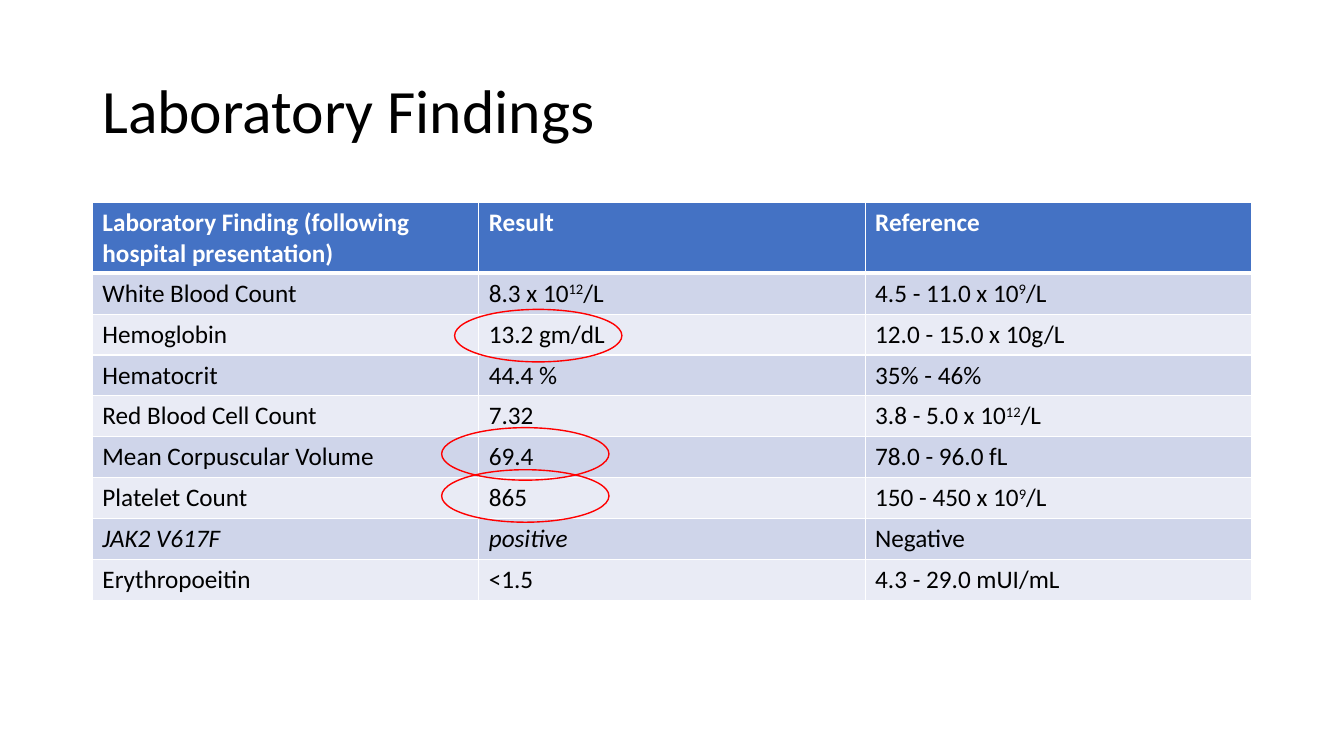
"""Build a slide with a table of laboratory findings and circled results."""
from dataclasses import dataclass
from typing import Any

from lxml import etree
from pptx import Presentation
from pptx import util as u
from pptx.dml.color import RGBColor
from pptx.enum import shapes, text
from pptx.oxml.ns import qn

COLOURS = {
    "text": "000000",
    "header": "4472C4",
    "odd_row": "CFD5EA",
    "even_row": "E9EBF5",
    "white": "FFFFFF",
    "circle": "FF0000",
}
FONT = "Calibri"
LEFT, WIDTH = 66, 828
TABLE_TOP = 144.75
HEADER_HEIGHT, ROW_HEIGHT = 50.4, 29.2
CIRCLE_WIDTH, CIRCLE_HEIGHT = 119.5, 37.5


@dataclass(frozen=True)
class Finding:
    name: str
    result: str
    reference: str
    italic: bool = False


@dataclass(frozen=True)
class Circle:
    left: float
    top: float


HEADER = Finding("Laboratory Finding (following hospital presentation)", "Result", "Reference")
FINDINGS = [
    Finding("White Blood Count", "8.3 x 10^12^/L", "4.5 - 11.0 x 10^9^/L"),
    Finding("Hemoglobin", "13.2 gm/dL", "12.0 - 15.0 x 10g/L"),
    Finding("Hematocrit", "44.4 %", "35% - 46%"),
    Finding("Red Blood Cell Count", "7.32", "3.8 - 5.0 x 10^12^/L"),
    Finding("Mean Corpuscular Volume", "69.4", "78.0 - 96.0 fL"),
    Finding("Platelet Count", "865", "150 - 450 x 10^9^/L"),
    Finding("JAK2 V617F", "positive", "Negative", italic=True),
    Finding("Erythropoeitin", "<1.5", "4.3 - 29.0 mUI/mL"),
]
CIRCLES = [Circle(324.75, 221), Circle(315.5, 335.5), Circle(315.5, 305.5)]


def colour(name: str) -> RGBColor:
    return RGBColor.from_string(COLOURS[name])


def write(para: Any, content: str, ink: str, **formats: Any) -> None:
    for index, part in enumerate(content.split("^")):
        span = para.add_run()
        span.text = part
        for key, value in {"name": FONT, **formats}.items():
            setattr(span.font, key, value)
        span.font.color.rgb = colour(ink)
        if index % 2:
            span._r.get_or_add_rPr().set("baseline", "30000")


def add_border(cell: Any, side: str, points: float) -> None:
    properties = cell._tc.get_or_add_tcPr()
    line = etree.SubElement(properties, qn(f"a:ln{side}"), w=str(u.Pt(points)))
    fill = etree.SubElement(line, qn("a:solidFill"))
    etree.SubElement(fill, qn("a:srgbClr"), val=COLOURS["white"])


def add_title(page: Any) -> None:
    box = page.shapes.add_textbox(u.Pt(LEFT), u.Pt(28.75), u.Pt(WIDTH), u.Pt(104.4))
    frame = box.text_frame
    for key, value in {"word_wrap": True, "vertical_anchor": text.MSO_ANCHOR.MIDDLE}.items():
        setattr(frame, key, value)
    para = frame.paragraphs[0]
    para.line_spacing = 0.9
    write(para, "Laboratory Findings", "text", size=u.Pt(44))


def add_findings(page: Any) -> None:
    rows = [HEADER, *FINDINGS]
    height = HEADER_HEIGHT + ROW_HEIGHT * len(FINDINGS)
    table = page.shapes.add_table(
        len(rows), 3, u.Pt(LEFT), u.Pt(TABLE_TOP), u.Pt(WIDTH), u.Pt(height)
    ).table
    for number, finding in enumerate(rows):
        is_header = number == 0
        table.rows[number].height = u.Pt(HEADER_HEIGHT if is_header else ROW_HEIGHT)
        band = "header" if is_header else "odd_row" if number % 2 else "even_row"
        borders = {"L": 1, "R": 1, "T": 3 if number == 1 else 1, "B": 3 if is_header else 1}
        contents = (finding.name, finding.result, finding.reference)
        for column, content in enumerate(contents):
            cell = table.cell(number, column)
            for side, points in borders.items():
                add_border(cell, side, points)
            cell.fill.solid()
            cell.fill.fore_color.rgb = colour(band)
            write(
                cell.text_frame.paragraphs[0],
                content,
                "white" if is_header else "text",
                size=u.Pt(18),
                bold=is_header,
                italic=finding.italic and column < 2,
            )


def add_circle(page: Any, circle: Circle) -> None:
    oval = page.shapes.add_shape(
        shapes.MSO_SHAPE.OVAL,
        u.Pt(circle.left), u.Pt(circle.top), u.Pt(CIRCLE_WIDTH), u.Pt(CIRCLE_HEIGHT),
    )
    oval.shadow.inherit = False
    oval.fill.background()
    oval.line.color.rgb = colour("circle")
    oval.line.width = u.Pt(1)


def main() -> None:
    deck = Presentation()
    for key, value in {"slide_width": u.Pt(960), "slide_height": u.Pt(540)}.items():
        setattr(deck, key, value)
    page = deck.slides.add_slide(deck.slide_layouts[6])
    add_title(page)
    add_findings(page)
    for circle in CIRCLES:
        add_circle(page, circle)
    deck.save("out.pptx")


if __name__ == "__main__":
    main()
